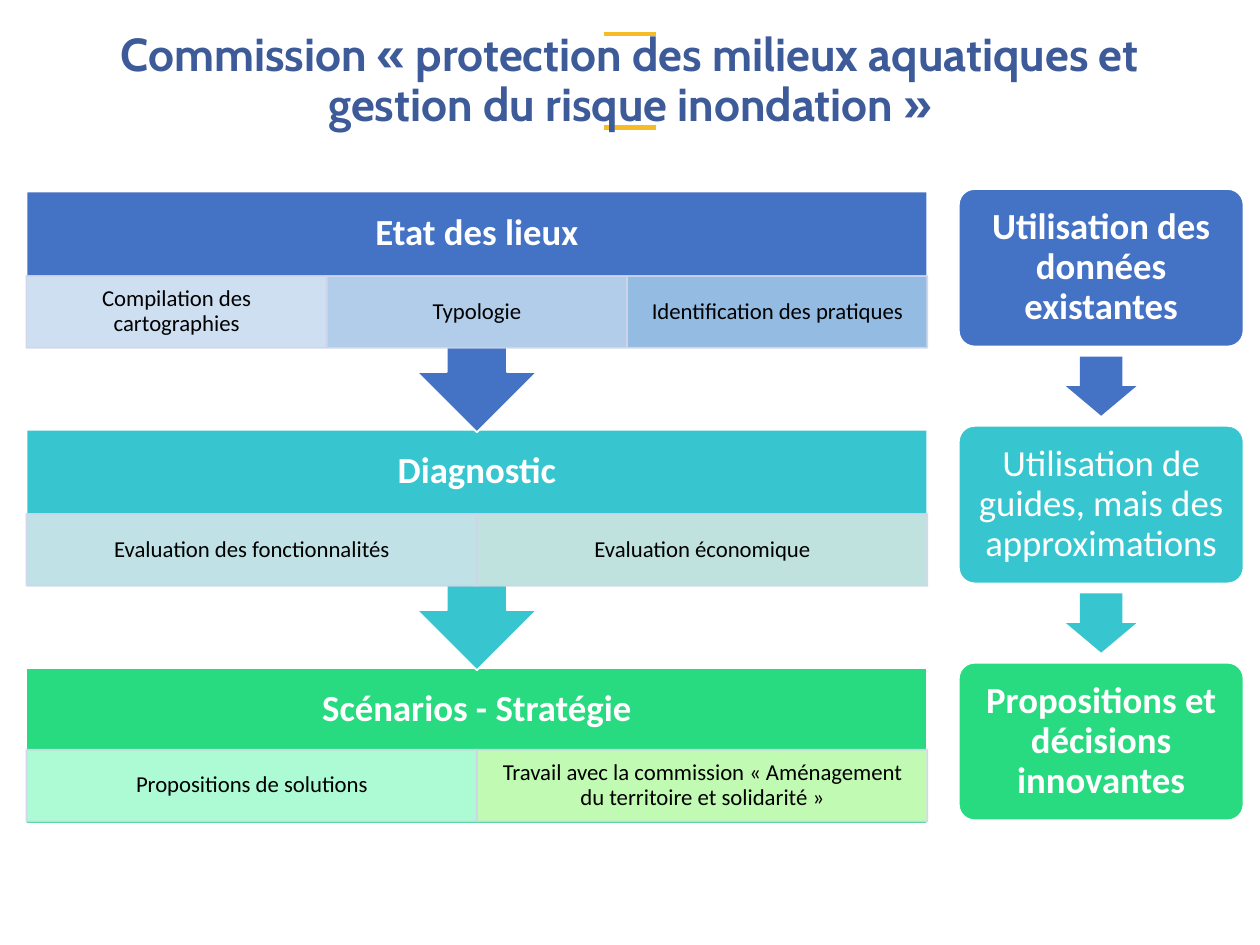
import collections

import pptx
import pptx.dml.color
import pptx.enum.shapes
import pptx.enum.text
import pptx.oxml
import pptx.oxml.ns
import pptx.util

SHAPES = pptx.enum.shapes.MSO_SHAPE
COLORS = {
    "title": "3D5A99", "accent": "F6BC25", "white": "FFFFFF", "black": "000000",
    "blue": "4472C4", "teal": "37C6CF", "green": "29DB80", "cell_line": "CFD5EA",
    "blue_pale": "DEEBF7", "blue_light": "BDD7EE", "blue_mid": "9DC3E6",
    "teal_pale": "CFE5E8", "teal_sage": "CFE6E0",
    "mint": "BBFFDF", "lime": "D2FFB9",
}
STAGES = [
    ("Etat des lieux", "blue", [
        ("Compilation des cartographies", "blue_pale"),
        ("Typologie", "blue_light"),
        ("Identification des pratiques", "blue_mid")]),
    ("Diagnostic", "teal", [
        ("Evaluation des fonctionnalités", "teal_pale"),
        ("Evaluation économique", "teal_sage")]),
    ("Scénarios - Stratégie", "green", [
        ("Propositions de solutions", "mint"),
        ("Travail avec la commission « Aménagement du territoire et solidarité »", "lime")]),
]
CARDS = [
    ("Utilisation des données existantes", "blue", True),
    ("Utilisation de guides, mais des approximations", "teal", False),
    ("Propositions et décisions innovantes", "green", True),
]

# The slide is a grid of 100 columns by 75 rows
COLUMNS, ROWS = 100, 75
WIDTH, HEIGHT = pptx.util.Inches(10), pptx.util.Inches(7.5)
Box = collections.namedtuple("Box", "left top width height")


def columns(count):
    return round(WIDTH * count / COLUMNS)


def rows(count):
    return round(HEIGHT * count / ROWS)


def frame(box):
    return columns(box.left), rows(box.top), columns(box.width), rows(box.height)


def rgb(name):
    return pptx.dml.color.RGBColor.from_string(COLORS[name])


def make_translucent(fill_parent, percent):
    color = fill_parent.find(".//" + pptx.oxml.ns.qn("a:srgbClr"))
    color.append(pptx.oxml.parse_xml(
        f'<a:alpha {pptx.oxml.ns.nsdecls("a")} val="{percent * 1000}"/>'))


def write(shape, text, size, color, bold=False, font="Calibri", insets=(0.1, 0.05)):
    text_frame = shape.text_frame
    text_frame.word_wrap = True
    text_frame.vertical_anchor = pptx.enum.text.MSO_ANCHOR.MIDDLE
    text_frame.margin_left = text_frame.margin_right = pptx.util.Inches(insets[0])
    text_frame.margin_top = text_frame.margin_bottom = pptx.util.Inches(insets[1])
    text_frame.text = text
    para = text_frame.paragraphs[0]
    para.alignment = pptx.enum.text.PP_ALIGN.CENTER
    para.line_spacing = 0.9
    for span in para.runs:
        span.font.name = font
        span.font.size = pptx.util.Pt(size)
        span.font.bold = bold
        span.font.color.rgb = rgb(color)


def add_block(page, kind, box, fill, line=None):
    shape = page.shapes.add_shape(kind, *frame(box))
    shape.shadow.inherit = False
    shape.fill.solid()
    shape.fill.fore_color.rgb = rgb(fill)
    if line:
        shape.line.color.rgb = rgb(line)
        shape.line.width = pptx.util.Pt(1)
    else:
        shape.line.fill.background()
    return shape


def add_title(page, box):
    # Short accent rules above and below the title
    middle = box.left + box.width / 2
    for offset in (-0.8, 6.6):
        y = rows(box.top + offset)
        rule = page.shapes.add_connector(
            pptx.enum.shapes.MSO_CONNECTOR.STRAIGHT,
            columns(middle - 2.1), y, columns(middle + 2.1), y)
        rule.line.color.rgb = rgb("accent")
        rule.line.width = pptx.util.Pt(2.75)
        rule._element.spPr.append(
            pptx.oxml.parse_xml(f'<a:effectLst {pptx.oxml.ns.nsdecls("a")}/>'))
    title = page.shapes.add_textbox(*frame(box))
    write(title, "Commission « protection des milieux aquatiques et "
          "gestion du risque inondation »", 26.4, "title", True, "Cabin")


def add_stage(page, box, heading, color, cells, is_last):
    # Body, with an arrow pointing to the next stage unless it is the last
    kind = SHAPES.RECTANGLE if is_last else SHAPES.DOWN_ARROW_CALLOUT
    add_block(page, kind, box, color, "white")
    header = page.shapes.add_textbox(*frame(box._replace(height=6.7)))
    write(header, heading, 21, "white", True, insets=(0.16, 0.16))
    # Equal cells under the heading
    cell_top = box.top + (6.5 if is_last else 6.7)
    cell_width = box.width / len(cells)
    for index, (text, fill) in enumerate(cells):
        cell_box = Box(box.left + index * cell_width, cell_top, cell_width, 5.7)
        cell = add_block(page, SHAPES.RECTANGLE, cell_box, fill, "cell_line")
        properties = cell._element.spPr
        for tag in ("a:solidFill", "a:ln"):
            make_translucent(properties.find(pptx.oxml.ns.qn(tag)), 90)
        write(cell, text, 13, "black", insets=(0.1, 0.02))


def add_stages(page, box):
    pitch = 18.9
    last = len(STAGES) - 1
    # From the bottom up, so that each arrow tip lies over the next stage
    for index in range(last, -1, -1):
        height = 12.4 if index == last else 19.1
        stage_box = Box(box.left, box.top + index * pitch, box.width, height)
        add_stage(page, stage_box, *STAGES[index], index == last)


def add_cards(page, box):
    pitch, card_height = 18.8, 12.5
    arrow_width, arrow_height = 5.6, 4.7
    for index, (text, color, bold) in enumerate(CARDS):
        top = box.top + index * pitch
        card = add_block(page, SHAPES.ROUNDED_RECTANGLE,
                         Box(box.left, top, box.width, card_height), color, "white")
        card.adjustments[0] = 0.1
        write(card, text, 21, "white", bold, insets=(0.09, 0.09))
        # Arrow centred in the gap before the next card
        if index < len(CARDS) - 1:
            gap = pitch - card_height
            arrow = add_block(page, SHAPES.DOWN_ARROW, Box(
                box.left + (box.width - arrow_width) / 2,
                top + card_height + (gap - arrow_height) / 2,
                arrow_width, arrow_height), color)
            arrow.adjustments[0] = 0.6
            arrow.adjustments[1] = 0.5


def main():
    deck = pptx.Presentation()
    deck.slide_width, deck.slide_height = WIDTH, HEIGHT
    page = deck.slides.add_slide(deck.slide_layouts[6])
    add_title(page, Box(6.9, 3.5, 86.2, 6))
    add_stages(page, Box(2.1, 15.2, 71.5, 50.2))
    add_cards(page, Box(76.1, 15, 22.6, 50.1))
    deck.save("out.pptx")


if __name__ == "__main__":
    main()
